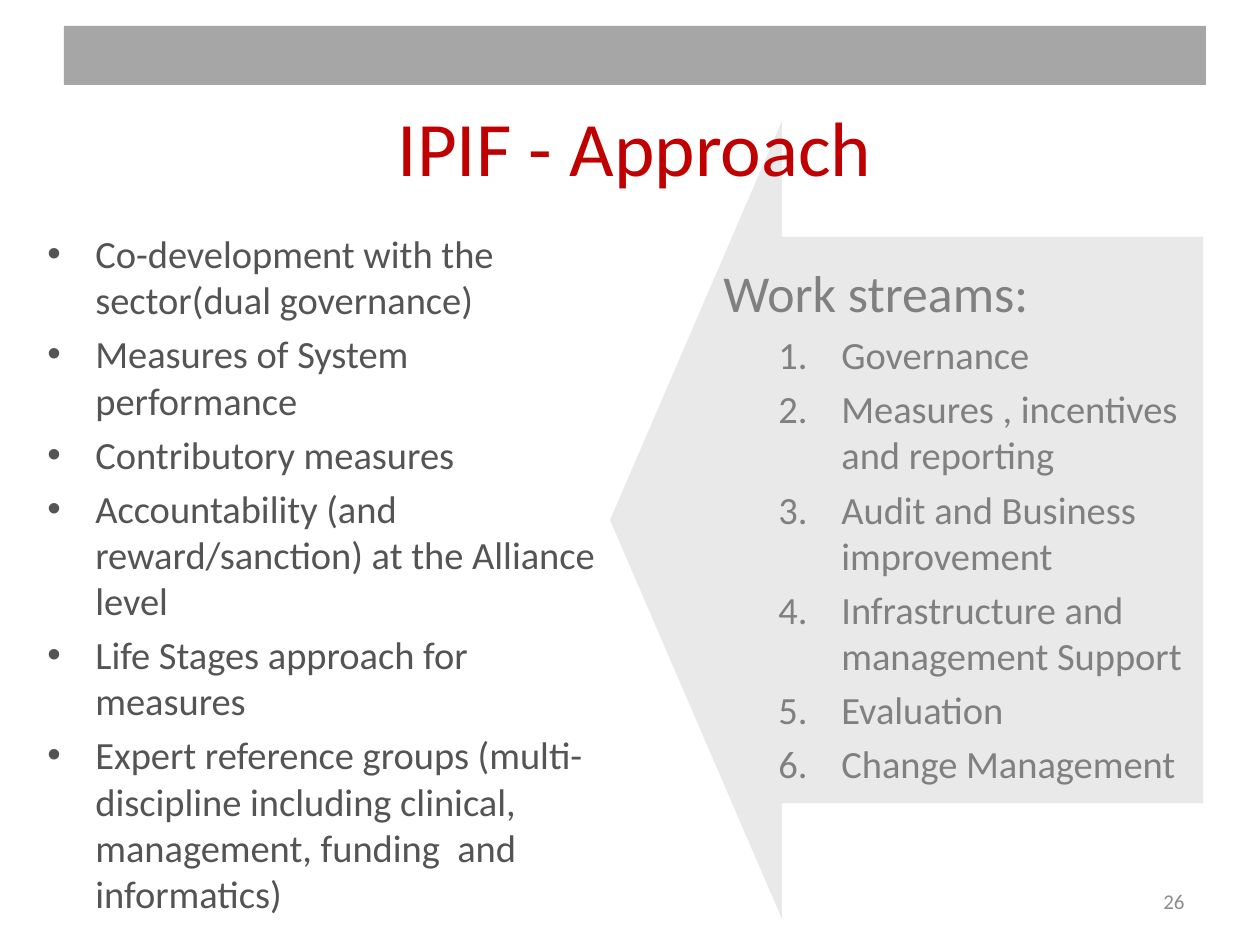
import pptx
import pptx.util
import pptx.dml.color
import pptx.enum.shapes
import pptx.enum.text
import pptx.oxml.ns
import lxml.etree

Color = pptx.dml.color.RGBColor
Shapes = pptx.enum.shapes.MSO_SHAPE
Align = pptx.enum.text.PP_ALIGN
Anchor = pptx.enum.text.MSO_ANCHOR
qn = pptx.oxml.ns.qn

PX = 914400 / 126
FONT = "Calibri"
RED = Color(0xC0, 0x00, 0x00)
DARK_GRAY = Color(0x54, 0x54, 0x54)
MID_GRAY = Color(0x80, 0x80, 0x80)
NUMBER_GRAY = Color(0x8C, 0x8C, 0x8C)
BAR_GRAY = Color(0xA6, 0xA6, 0xA6)
ARROW_GRAY = Color(0xBF, 0xBF, 0xBF)

APPROACH = [
    "Co-development with the sector(dual governance)",
    "Measures of System performance",
    "Contributory measures",
    "Accountability (and reward/sanction) at the Alliance level",
    "Life Stages approach for measures",
    "Expert reference groups (multi-discipline including clinical, "
    "management, funding  and informatics)",
]
WORK_STREAMS = [
    "Governance",
    "Measures , incentives and reporting",
    "Audit and Business improvement",
    "Infrastructure and management Support",
    "Evaluation",
    "Change Management",
]


def emu(px):
    return round(px * PX)


class SlideBuilder:
    def __init__(self, deck):
        self.page = deck.slides.add_slide(deck.slide_layouts[6])

    def shape(self, kind, bounds, color, opacity=100):
        shape = self.page.shapes.add_shape(kind, *map(emu, bounds))
        shape.shadow.inherit = False
        shape.line.fill.background()
        shape.fill.solid()
        shape.fill.fore_color.rgb = color
        if opacity < 100:
            tint = shape.fill._xPr.find(".//" + qn("a:srgbClr"))
            lxml.etree.SubElement(tint, qn("a:alpha"), val=str(opacity * 1000))
        return shape

    def text_box(self, bounds, anchor=Anchor.TOP):
        frame = self.page.shapes.add_textbox(*map(emu, bounds)).text_frame
        frame.word_wrap = True
        frame.vertical_anchor = anchor
        return frame

    def paragraph(self, frame, text, size, color, align=Align.LEFT, space=0):
        first = frame.paragraphs[0]
        para = frame.add_paragraph() if first.runs else first
        para.alignment = align
        para.space_before = pptx.util.Pt(space)
        span = para.add_run()
        span.text = text
        span.font.name = FONT
        span.font.size = pptx.util.Pt(size)
        span.font.color.rgb = color
        return para

    def items(self, frame, texts, color, margin, hanging, marker, level=0):
        tag, attributes = marker
        for text in texts:
            para = self.paragraph(frame, text, 22, color, space=4.5)
            para.level = level
            properties = para._p.get_or_add_pPr()
            properties.set("marL", str(emu(margin)))
            properties.set("indent", str(-emu(hanging)))
            lxml.etree.SubElement(properties, qn("a:buFont"), typeface="Arial" if tag == "a:buChar" else FONT)
            lxml.etree.SubElement(properties, qn(tag), **attributes)


def main():
    deck = pptx.Presentation()
    deck.slide_width, deck.slide_height = emu(1260), emu(945)
    slide = SlideBuilder(deck)

    # Arrow pointing from the work streams to the approach
    arrow = slide.shape(Shapes.RIGHT_ARROW, (610, 121, 593, 798), ARROW_GRAY, 34)
    arrow.rotation = 180
    arrow.adjustments[0] = 0.71
    arrow.adjustments[1] = 0.29

    # Title
    title = slide.text_box((68, 67, 1134, 157), Anchor.MIDDLE)
    slide.paragraph(title, "IPIF - Approach", 44, RED, Align.CENTER)

    # Approach list
    approach = slide.text_box((35, 224, 577, 624))
    slide.items(approach, APPROACH, DARK_GRAY, 48, 48, ("a:buChar", {"char": "•"}))

    # Top bar
    slide.shape(Shapes.RECTANGLE, (64, 26, 1142, 59), BAR_GRAY)

    # Work streams
    streams = slide.text_box((711, 255, 493, 546))
    slide.paragraph(streams, "Work streams:", 29.6, MID_GRAY, space=6)
    slide.items(streams, WORK_STREAMS, MID_GRAY, 118, 63,
                ("a:buAutoNum", {"type": "arabicPeriod"}), level=1)

    # Page number
    number = slide.text_box((903, 876, 294, 50), Anchor.MIDDLE)
    slide.paragraph(number, "26", 12, NUMBER_GRAY, Align.RIGHT)

    deck.save("out.pptx")


if __name__ == "__main__":
    main()
